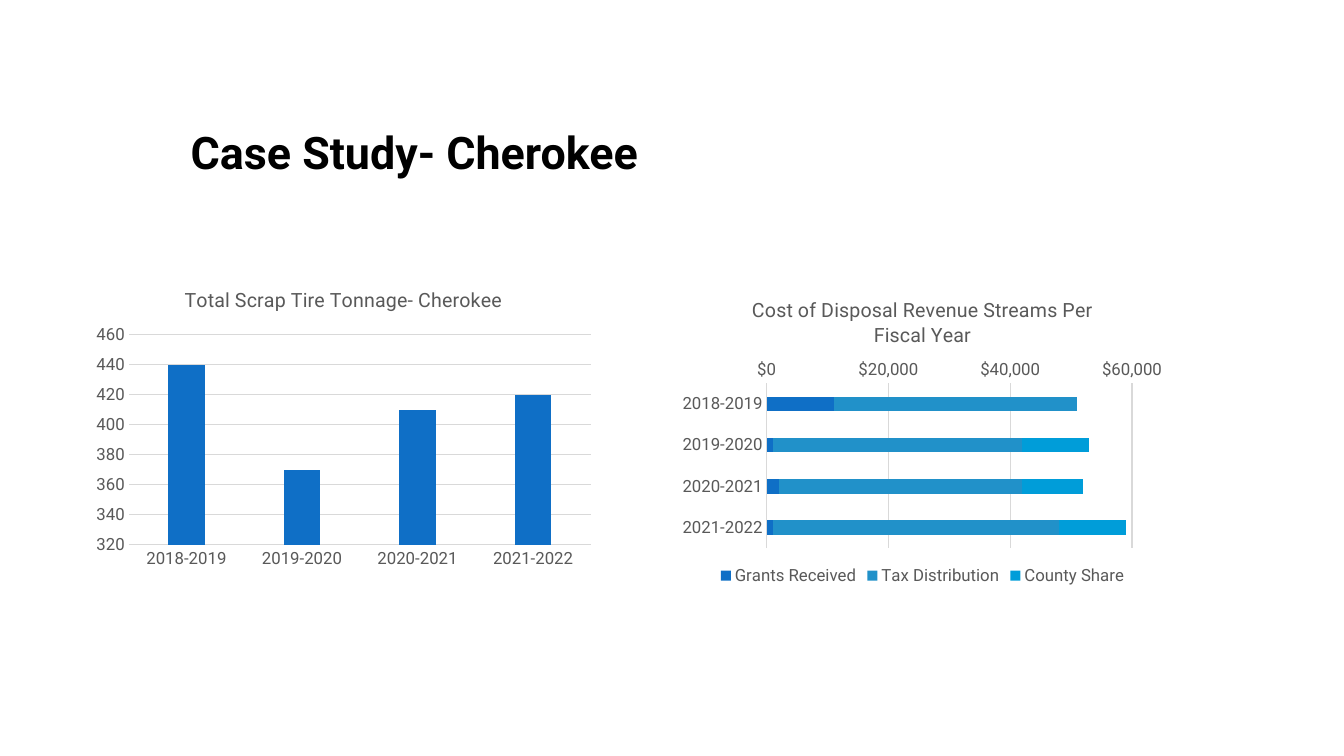
"""Build the Cherokee case study slide with its tonnage and revenue charts."""
from pptx import Presentation
from pptx.chart.data import CategoryChartData
from pptx.dml.color import RGBColor
from pptx.enum.chart import XL_CHART_TYPE, XL_LEGEND_POSITION, XL_TICK_MARK
from pptx.enum.text import MSO_ANCHOR
from pptx.util import Pt

COLUMN = XL_CHART_TYPE.COLUMN_CLUSTERED
STACKED_BAR = XL_CHART_TYPE.BAR_STACKED
BOTTOM = XL_LEGEND_POSITION.BOTTOM
NO_TICK = XL_TICK_MARK.NONE
MIDDLE = MSO_ANCHOR.MIDDLE

FONT = "Roboto"
GREY = "595959"
RULE = "D9D9D9"
YEARS = ["2018-2019", "2019-2020", "2020-2021", "2021-2022"]


def color(value):
    return RGBColor.from_string(value)


def write(text_frame, text, size, fill, bold=False):
    text_frame.text = text
    font = text_frame.paragraphs[0].runs[0].font
    font.name, font.size, font.bold = FONT, Pt(size), bold
    font.color.rgb = color(fill)


charts = [
    dict(kind=COLUMN, box=(61.5, 194, 367.9, 216.4),
         title="Total Scrap Tire Tonnage- Cherokee",
         gap=219, overlap=-27, scale=(320, 460, 20), number_format="General",
         series=[("Series 1", [440, 370, 410, 420], "0F6FC6")]),
    dict(kind=STACKED_BAR, box=(480.4, 201.2, 357.1, 220),
         title="Cost of Disposal Revenue Streams Per Fiscal Year",
         gap=182, overlap=100, scale=(0, 65000, 20000), number_format='"$"#,##0',
         series=[("Grants Received", [11000, 1000, 2000, 1000], "0F6FC6"),
                 ("Tax Distribution", [40000, 41000, 40000, 47000], "2191C9"),
                 ("County Share", [0, 11000, 10000, 11000], "009DD9")]),
]

presentation = Presentation()
presentation.slide_width, presentation.slide_height = Pt(960), Pt(540)
slide = presentation.slides.add_slide(presentation.slide_layouts[6])

heading = slide.shapes.add_textbox(Pt(129), Pt(54), Pt(702), Pt(108)).text_frame
heading.word_wrap = True
heading.vertical_anchor = MIDDLE
write(heading, "Case Study- Cherokee", size=32, fill="000000", bold=True)

for item in charts:
    data = CategoryChartData(number_format=item["number_format"])
    data.categories = YEARS
    for name, values, _ in item["series"]:
        data.add_series(name, values)
    box = [Pt(length) for length in item["box"]]
    chart = slide.shapes.add_chart(item["kind"], *box, data).chart
    chart.font.name, chart.font.size = FONT, Pt(12)
    chart.font.color.rgb = color(GREY)
    chart.has_title = True
    write(chart.chart_title.text_frame, item["title"], size=14, fill=GREY)
    chart.chart_title.include_in_layout = False

    plot = chart.plots[0]
    plot.gap_width, plot.overlap = item["gap"], item["overlap"]
    plot.vary_by_categories = False
    for series, (_, _, fill) in zip(plot.series, item["series"]):
        series.format.fill.solid()
        series.format.fill.fore_color.rgb = color(fill)
        series.invert_if_negative = False

    category_axis, value_axis = chart.category_axis, chart.value_axis
    for axis in (category_axis, value_axis):
        axis.major_tick_mark = axis.minor_tick_mark = NO_TICK
    value_axis.minimum_scale, value_axis.maximum_scale, value_axis.major_unit = item["scale"]
    value_axis.tick_labels.number_format = item["number_format"]
    value_axis.tick_labels.number_format_is_linked = False
    value_axis.has_major_gridlines = True
    value_axis.format.line.fill.background()
    for line in (category_axis.format.line, value_axis.major_gridlines.format.line):
        line.width = Pt(0.75)
        line.color.rgb = color(RULE)

    category_axis.reverse_order = item["kind"] == STACKED_BAR
    chart.has_legend = len(item["series"]) > 1
    if chart.has_legend:
        chart.legend.position = BOTTOM
        chart.legend.include_in_layout = False

presentation.save("out.pptx")
